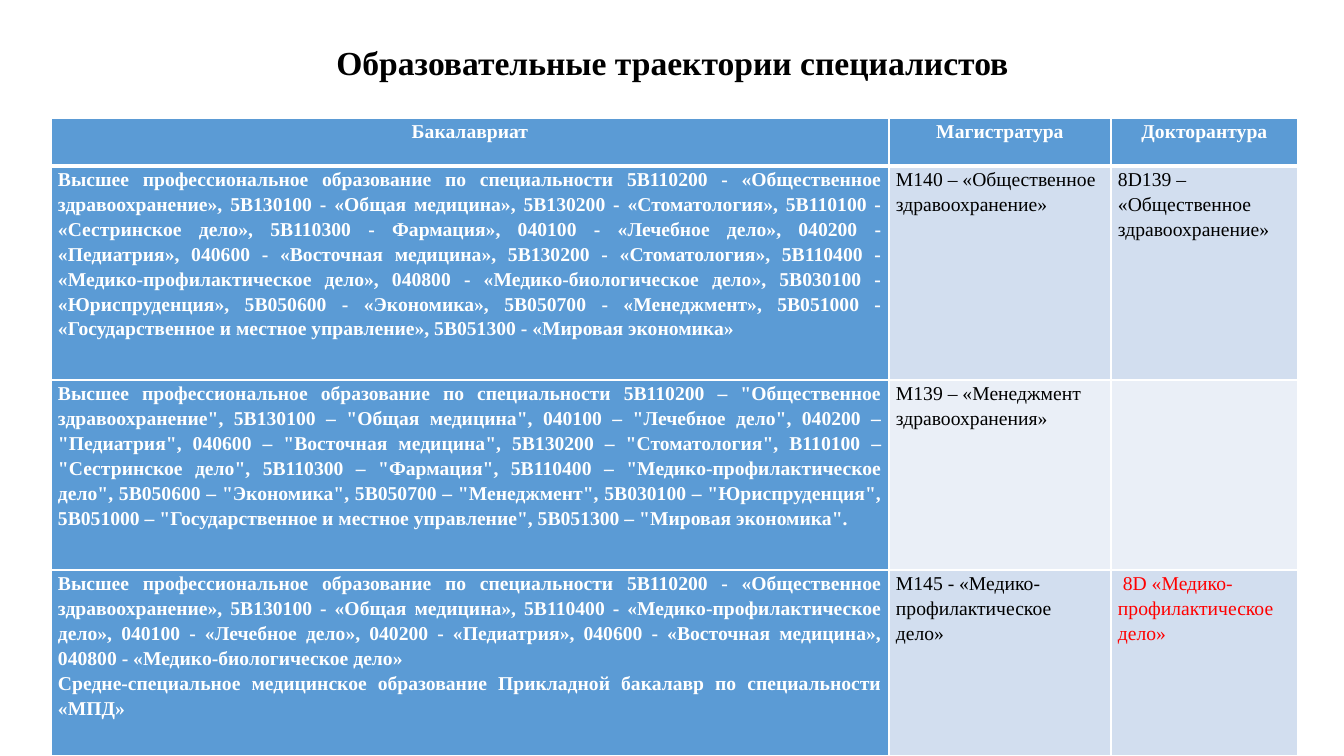
from lxml import etree
from pptx import Presentation
from pptx import util as u
from pptx.dml.color import RGBColor
from pptx.enum import text as t
from pptx.oxml import ns

PX = 914400 / 100.8
FONT = "Times New Roman"
BLACK = RGBColor(0x00, 0x00, 0x00)
WHITE = RGBColor(0xFF, 0xFF, 0xFF)
RED = RGBColor(0xFF, 0x00, 0x00)
BLUE = RGBColor(0x5B, 0x9B, 0xD5)
BANDS = [RGBColor(0xEA, 0xEF, 0xF7), RGBColor(0xD2, 0xDE, 0xEF)]

COLS = [838, 222, 187]
ROWS = [48, 214, 190, 186]
HEADS = ["Бакалавриат", "Магистратура", "Докторантура"]
PATHS = [
    (["Высшее профессиональное образование по специальности 5В110200 - «Общественное здравоохранение», "
      "5B130100 - «Общая медицина», 5B130200 - «Стоматология», 5В110100 - «Сестринское дело», "
      "5В110300 - Фармация», 040100 - «Лечебное дело», 040200 - «Педиатрия», "
      "040600 - «Восточная медицина», 5B130200 - «Стоматология», "
      "5В110400 - «Медико-профилактическое дело», 040800 - «Медико-биологическое дело», "
      "5В030100 - «Юриспруденция», 5В050600 - «Экономика», 5В050700 - «Менеджмент», "
      "5В051000 - «Государственное и местное управление», 5В051300 - «Мировая экономика»"],
     ["М140 – «Общественное здравоохранение»"],
     ["8D139 – «Общественное здравоохранение»"]),
    (['Высшее профессиональное образование по специальности 5В110200 – "Общественное здравоохранение", '
      '5B130100 – "Общая медицина", 040100 – "Лечебное дело", 040200 – "Педиатрия", '
      '040600 – "Восточная медицина", 5B130200 – "Стоматология", В110100 – "Сестринское дело", '
      '5В110300 – "Фармация", 5В110400 – "Медико-профилактическое дело", '
      '5В050600 – "Экономика", 5В050700 – "Менеджмент", 5В030100 – "Юриспруденция", '
      '5В051000 – "Государственное и местное управление", 5В051300 – "Мировая экономика".'],
     ["М139 – «Менеджмент здравоохранения»"],
     []),
    (["Высшее профессиональное образование по специальности 5В110200 - «Общественное здравоохранение», "
      "5B130100 - «Общая медицина», 5В110400 - «Медико-профилактическое дело», "
      "040100 - «Лечебное дело», 040200 - «Педиатрия», 040600 - «Восточная медицина», "
      "040800 - «Медико-биологическое дело»",
      "Средне-специальное медицинское образование Прикладной бакалавр по специальности «МПД»"],
     ["М145 - «Медико-профилактическое дело»"],
     [" 8D «Медико-профилактическое дело»"]),
]


def px(n):
    return u.Emu(round(n * PX))


def write(par, words, size, color, bold, align, space):
    par.alignment = align
    par.line_spacing = space
    run = par.add_run()
    run.text = words
    font = run.font
    font.name, font.size, font.bold = FONT, u.Pt(size), bold
    font.color.rgb = color


def edge(cell, row):
    """Draw white cell borders, thick between the head and the body."""
    props = cell._tc.get_or_add_tcPr()
    thick = {"T": row == 1, "B": row == 0}
    for i, side in enumerate("LRTB"):
        width = u.Pt(3 if thick.get(side) else 1)
        line = etree.Element(ns.qn("a:ln" + side), w=str(width))
        fill = etree.SubElement(line, ns.qn("a:solidFill"))
        etree.SubElement(fill, ns.qn("a:srgbClr"), val=str(WHITE))
        props.insert(i, line)


def fill_cell(cell, row, col, lines):
    cell.margin_left = cell.margin_right = px(7)
    cell.margin_top = cell.margin_bottom = 0
    strong = row == 0 or col == 0
    cell.fill.solid()
    cell.fill.fore_color.rgb = BLUE if strong else BANDS[row % 2]
    edge(cell, row)
    if row == 0:
        align = t.PP_ALIGN.CENTER
    else:
        align = t.PP_ALIGN.LEFT if col else t.PP_ALIGN.JUSTIFY
    color = WHITE if strong else BLACK
    if (row, col) == (3, 2):
        color = RED
    frame = cell.text_frame
    for i, words in enumerate(lines):
        par = frame.add_paragraph() if i else frame.paragraphs[0]
        write(par, words, 14, color, strong, align, 1.15)


def add_title(slide, x, y, w, h):
    title = slide.shapes.title
    title.left, title.top, title.width, title.height = map(px, (x, y, w, h))
    frame = title.text_frame
    frame.auto_size = t.MSO_AUTO_SIZE.NONE
    frame.vertical_anchor = t.MSO_ANCHOR.MIDDLE
    write(frame.paragraphs[0], "Образовательные траектории специалистов",
          24, BLACK, True, t.PP_ALIGN.CENTER, 0.9)


def add_grid(slide, x, y, w, h):
    data = [[[head] for head in HEADS], *PATHS]
    grid = slide.shapes.add_table(len(ROWS), len(COLS), *map(px, (x, y, w, h))).table
    for col, size in zip(grid.columns, COLS):
        col.width = px(size)
    for row, size in zip(grid.rows, ROWS):
        row.height = px(size)
    for r, cells in enumerate(data):
        for c, lines in enumerate(cells):
            fill_cell(grid.cell(r, c), r, c, lines)


def main():
    deck = Presentation()
    deck.slide_width, deck.slide_height = px(1344), px(756)
    slide = deck.slides.add_slide(deck.slide_layouts[5])
    add_title(slide, 93, 40, 1159, 49)
    add_grid(slide, 51, 118, sum(COLS), sum(ROWS))
    deck.save("out.pptx")


if __name__ == "__main__":
    main()
